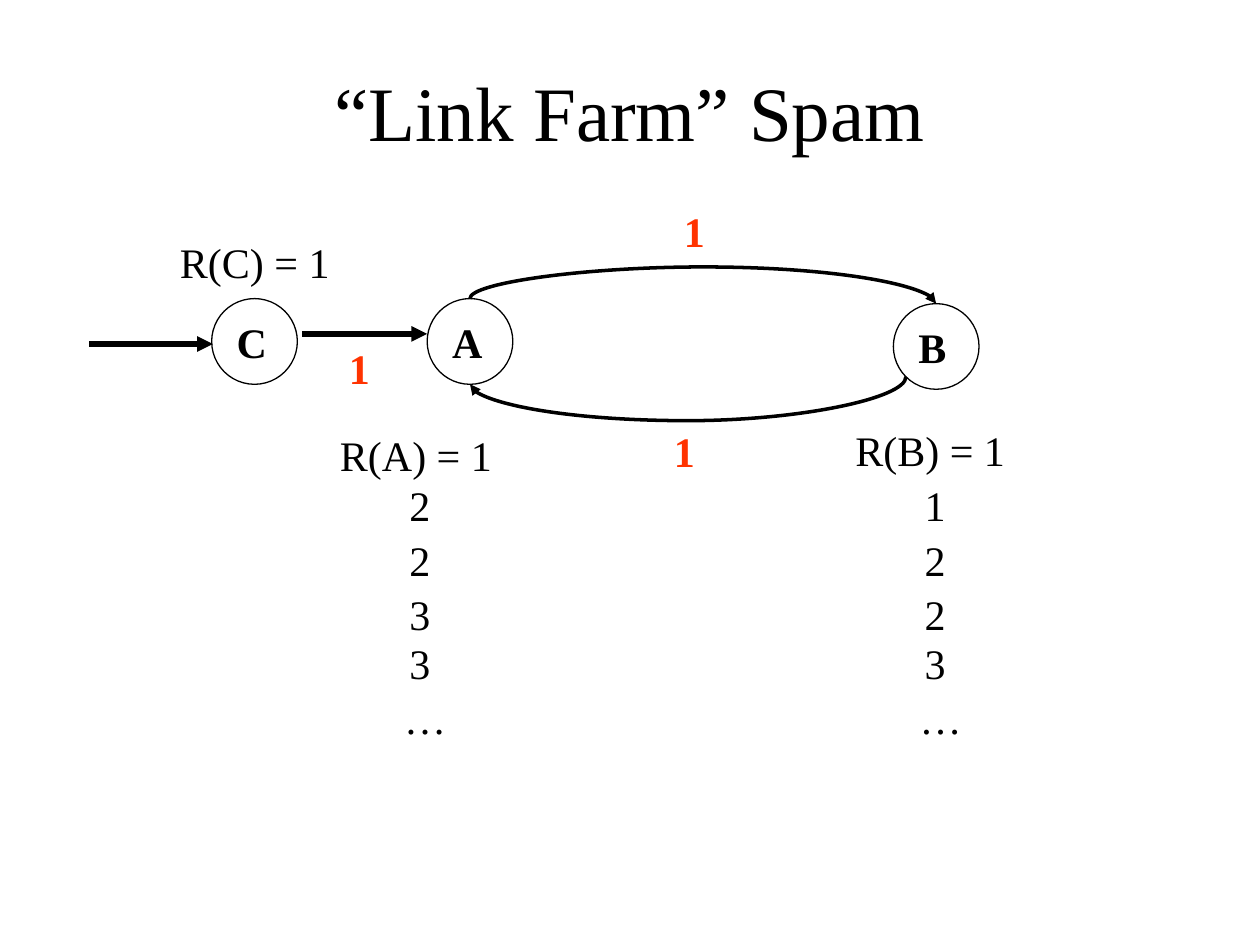
from lxml import etree
from pptx import Presentation
from pptx.dml.color import RGBColor
from pptx.enum import shapes, text
from pptx.oxml.ns import qn
from pptx.util import Inches, Pt

FONT = "Times New Roman"
BLACK, RED = "000000", "FF3300"
NODE_SIZE = 0.68
LABEL_HEIGHT = 0.5

TITLE = "“Link Farm” Spam"
NODES = [("A", 3.39, 2.37), ("C", 1.68, 2.37), ("B", 7.09, 2.41)]
# start, end, how far the curve bends from its start (negative is up)
CURVES = [((3.73, 2.37), (7.43, 2.41), -0.25),
          ((7.19, 2.99), (3.73, 3.05), 0.35)]
ARROWS = [((2.4, 2.65), (3.39, 2.65)), ((0.71, 2.73), (1.69, 2.73))]
# left, top, width
LINK_WEIGHTS = [("1", 2.67, 2.67, 0.42), ("1", 5.25, 3.33, 0.87),
                ("1", 5.33, 1.58, 0.87)]
RANKS = [("R(C) = 1", 1.33, 1.83), ("R(B) = 1", 6.69, 3.32),
         ("R(A) = 1", 2.6, 3.36)]
RANK_WIDTH = 1.57
# left of each column and its rank after each round
ROUNDS = [(3.15, ["2", "2", "3", "3"]), (7.24, ["1", "2", "2", "3"])]
ROUND_TOPS = [3.76, 4.19, 4.62, 5.01]
ROUND_WIDTH = 1.18
MORE, MORE_TOP, MORE_SHIFT = "…", 5.45, -0.04


def rgb(color):
    return RGBColor.from_string(color)


def write(shape, words, size=24, color=BLACK, bold=False, align=text.PP_ALIGN.LEFT,
          anchor=text.MSO_ANCHOR.TOP):
    frame = shape.text_frame
    frame.word_wrap = True
    frame.vertical_anchor = anchor
    paragraph = frame.paragraphs[0]
    paragraph.alignment = align
    run = paragraph.add_run()
    run.text = words
    run.font.name, run.font.size, run.font.bold = FONT, Pt(size), bold
    run.font.color.rgb = rgb(color)


def add_label(slide, words, left, top, width, height=LABEL_HEIGHT, **style):
    box = slide.shapes.add_textbox(*map(Inches, (left, top, width, height)))
    write(box, words, **style)


def add_node(slide, name, left, top):
    node = slide.shapes.add_shape(shapes.MSO_SHAPE.OVAL, Inches(left), Inches(top),
                                  Inches(NODE_SIZE), Inches(NODE_SIZE))
    node.shadow.inherit = False
    node.fill.background()
    node.line.color.rgb = rgb(BLACK)
    node.line.width = Pt(0.75)
    write(node, name, bold=True, anchor=text.MSO_ANCHOR.MIDDLE)


def add_arrow(slide, kind, start, end, width):
    arrow = slide.shapes.add_connector(kind, *map(Inches, (*start, *end)))
    arrow.line.color.rgb = rgb(BLACK)
    arrow.line.width = Pt(width)
    etree.SubElement(arrow.line._get_or_add_ln(), qn("a:tailEnd"), type="triangle")
    etree.SubElement(arrow._element.spPr, qn("a:effectLst"))
    return arrow


def add_curve(slide, start, end, bend):
    """Draw a curve that leaves and arrives vertically: a quarter-turned connector."""
    (x1, y1), (x2, y2) = start, end
    drop, span = y2 - y1, abs(x2 - x1)
    left, top = (x1 + x2 - drop) / 2, (y1 + y2 - span) / 2
    curve = add_arrow(slide, shapes.MSO_CONNECTOR.CURVE, (left, top),
                      (left + drop, top + span), 2)
    properties = curve._element.spPr
    frame = properties.find(qn("a:xfrm"))
    frame.set("rot", "5400000")
    if x2 > x1:
        frame.set("flipV", "1")
    geometry = properties.find(qn("a:prstGeom"))
    adjustments = geometry.find(qn("a:avLst"))
    etree.SubElement(adjustments, qn("a:gd"), name="adj1",
                     fmla=f"val {round(bend / drop * 100000)}")


def main():
    deck = Presentation()
    deck.slide_width, deck.slide_height = Inches(10), Inches(7.5)
    slide = deck.slides.add_slide(deck.slide_layouts[6])

    add_label(slide, TITLE, 0.75, 0.25, 8.5, 1.25, size=44,
              align=text.PP_ALIGN.CENTER, anchor=text.MSO_ANCHOR.MIDDLE)
    for node in NODES:
        add_node(slide, *node)
    for curve in CURVES:
        add_curve(slide, *curve)
    for weight in LINK_WEIGHTS:
        add_label(slide, *weight, color=RED, bold=True)
    for rank in RANKS:
        add_label(slide, *rank, RANK_WIDTH)
    for left, values in ROUNDS:
        for value, top in zip(values, ROUND_TOPS):
            add_label(slide, value, left, top, ROUND_WIDTH)
        add_label(slide, MORE, left + MORE_SHIFT, MORE_TOP, ROUND_WIDTH)
    for start, end in ARROWS:
        add_arrow(slide, shapes.MSO_CONNECTOR.STRAIGHT, start, end, 3)

    deck.save("out.pptx")


if __name__ == "__main__":
    main()
